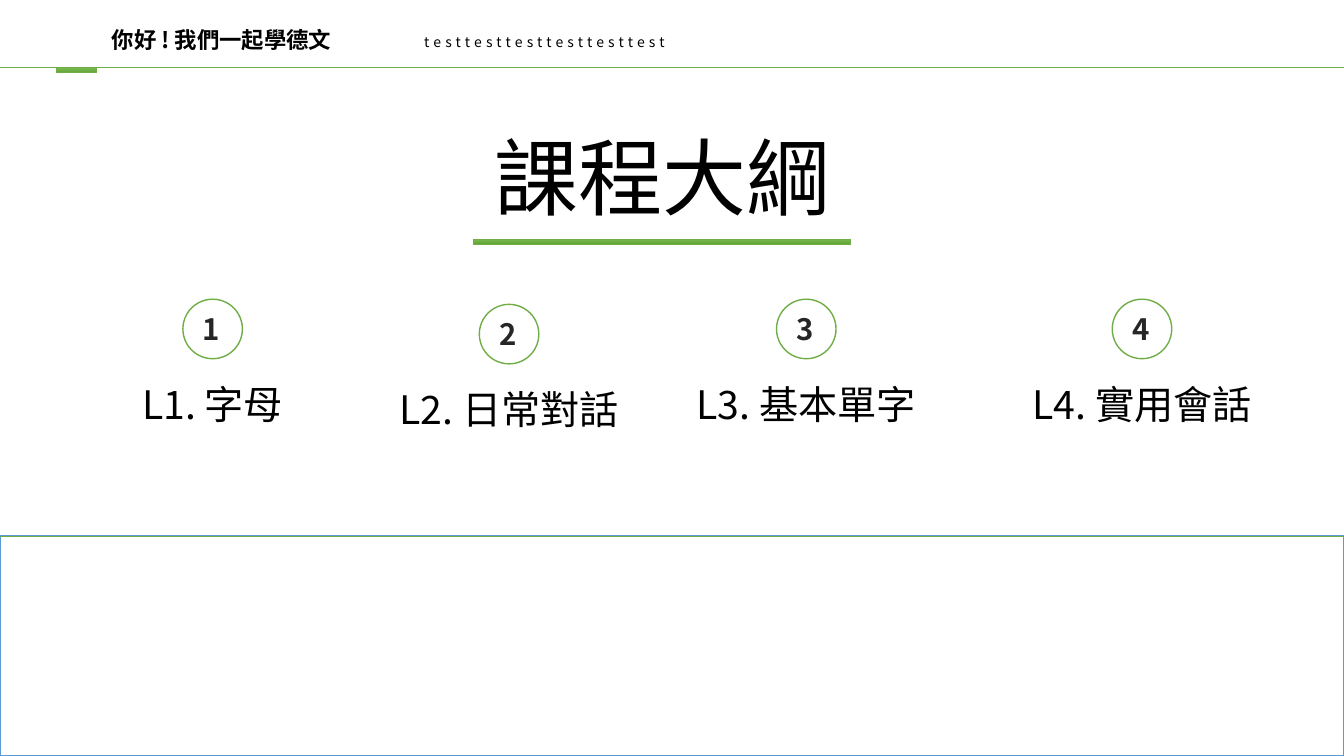
"""Build the course outline slide of a beginner German class."""
import copy

import lxml.etree
import pptx
import pptx.dml.color
import pptx.enum.shapes
import pptx.enum.text
import pptx.oxml.ns
import pptx.util

Cm = pptx.util.Cm
SHAPE = pptx.enum.shapes.MSO_SHAPE
ALIGN = pptx.enum.text.PP_ALIGN

HEADING = "課程大綱"
COURSE = "你好 ! 我們一起學德文"
TAGLINE = "testtesttesttesttesttest"
LESSONS = [
    ("1", "L1. 字母", 1.98, 9.45),
    ("2", "L2. 日常對話", 9.45, 9.58),
    ("3", "L3. 基本單字", 16.94, 9.45),
    ("4", "L4. 實用會話", 25.4, 9.45),
]

FONT = "Noto Sans CJK SC"
COLORS = {
    "white": "FFFFFF", "black": "000000", "number": "262626",
    "green": "70AD47", "blue": "5B9BD5",
}
BAR_GRADIENT = [(0, "81B861"), (0.5, "6FB242"), (1, "62A336")]

WIDTH, HEIGHT = 33.87, 19.05
HEADER_Y, FOOTER_Y = 1.7, 13.51
LABEL_WIDTH, LABEL_HEIGHT = 6.76, 1.45
CIRCLE, CIRCLE_RISE = 1.5, 1.91
NUMBER_WIDTH, NUMBER_HEIGHT = 0.99, 1.14


def rgb(value):
    return pptx.dml.color.RGBColor.from_string(value)


def outline(line, color, width):
    line.color.rgb = rgb(COLORS[color])
    line.width = pptx.util.Pt(width)


def write(frame, words, size, color="black", bold=False, align=ALIGN.LEFT, spacing=0):
    frame.word_wrap = True
    frame.auto_size = pptx.enum.text.MSO_AUTO_SIZE.NONE
    frame.vertical_anchor = pptx.enum.text.MSO_ANCHOR.MIDDLE
    paragraph = frame.paragraphs[0]
    paragraph.alignment = align
    run = paragraph.add_run()
    run.text = words
    font = run.font
    font.name, font.size, font.bold = FONT, pptx.util.Pt(size), bold
    font.color.rgb = rgb(COLORS[color])
    properties = run._r.get_or_add_rPr()
    if spacing:
        properties.set("spc", str(spacing * 100))
    lxml.etree.SubElement(properties, pptx.oxml.ns.qn("a:ea"), typeface=FONT)


def add_text(shapes, left, top, width, height, words, size, **style):
    box = shapes.add_textbox(Cm(left), Cm(top), Cm(width), Cm(height))
    write(box.text_frame, words, size, **style)


def add_outlined(shapes, kind, left, top, width, height, color):
    shape = shapes.add_shape(kind, Cm(left), Cm(top), Cm(width), Cm(height))
    shape.shadow.inherit = False
    shape.fill.solid()
    shape.fill.fore_color.rgb = rgb(COLORS["white"])
    outline(shape.line, color, 1)
    return shape


def add_bar(shapes, left, top, width, height):
    bar = add_outlined(shapes, SHAPE.RECTANGLE, left, top, width, height, "green")
    outline(bar.line, "green", 0.5)
    bar.fill.gradient()
    bar.fill.gradient_angle = 270
    first = bar._element.spPr.find(".//" + pptx.oxml.ns.qn("a:gs"))
    first.addnext(copy.deepcopy(first))
    for stop, (position, color) in zip(bar.fill.gradient_stops, BAR_GRADIENT):
        stop.position = position
        stop.color.rgb = rgb(color)


def add_rule(shapes, y):
    rule = shapes.add_connector(
        pptx.enum.shapes.MSO_CONNECTOR.STRAIGHT, 0, Cm(y), Cm(WIDTH), Cm(y))
    outline(rule.line, "green", 0.5)
    lxml.etree.SubElement(rule._element.spPr, pptx.oxml.ns.qn("a:effectLst"))


def add_lesson(slide, number, label, left, top):
    lesson = slide.shapes.add_group_shape().shapes
    center = left + LABEL_WIDTH / 2
    circle_top = top - CIRCLE_RISE
    add_text(lesson, left, top, LABEL_WIDTH, LABEL_HEIGHT, label, 28, align=ALIGN.CENTER)
    add_outlined(lesson, SHAPE.OVAL, center - CIRCLE / 2, circle_top,
                 CIRCLE, CIRCLE, "green")
    add_text(lesson, center - NUMBER_WIDTH / 2,
             circle_top + (CIRCLE - NUMBER_HEIGHT) / 2,
             NUMBER_WIDTH, NUMBER_HEIGHT, number, 21, color="number", bold=True)


def main():
    deck = pptx.Presentation()
    deck.slide_width, deck.slide_height = Cm(WIDTH), Cm(HEIGHT)
    slide = deck.slides.add_slide(deck.slide_layouts[5])

    title = slide.shapes.title
    title.left, title.top, title.width, title.height = Cm(12.19), Cm(3.02), Cm(8.99), Cm(2.82)
    title.text_frame.margin_left = title.text_frame.margin_right = 0
    write(title.text_frame, HEADING, 60, align=ALIGN.CENTER)
    add_bar(slide.shapes, 11.94, 6.02, 9.5, 0.13)

    add_outlined(slide.shapes, SHAPE.RECTANGLE, 0, FOOTER_Y,
                 WIDTH, HEIGHT - FOOTER_Y, "blue")
    add_rule(slide.shapes, FOOTER_Y)

    header = slide.shapes.add_group_shape().shapes
    add_text(header, 2.57, 0.53, 8.76, 0.94, COURSE, 16, bold=True)
    add_text(header, 10.44, 0.71, 21.36, 0.69, TAGLINE, 10, spacing=3)
    add_rule(header, HEADER_Y)
    add_bar(header, 1.42, HEADER_Y, 1, 0.13)

    for lesson in LESSONS:
        add_lesson(slide, *lesson)
    deck.save("out.pptx")


if __name__ == "__main__":
    main()
